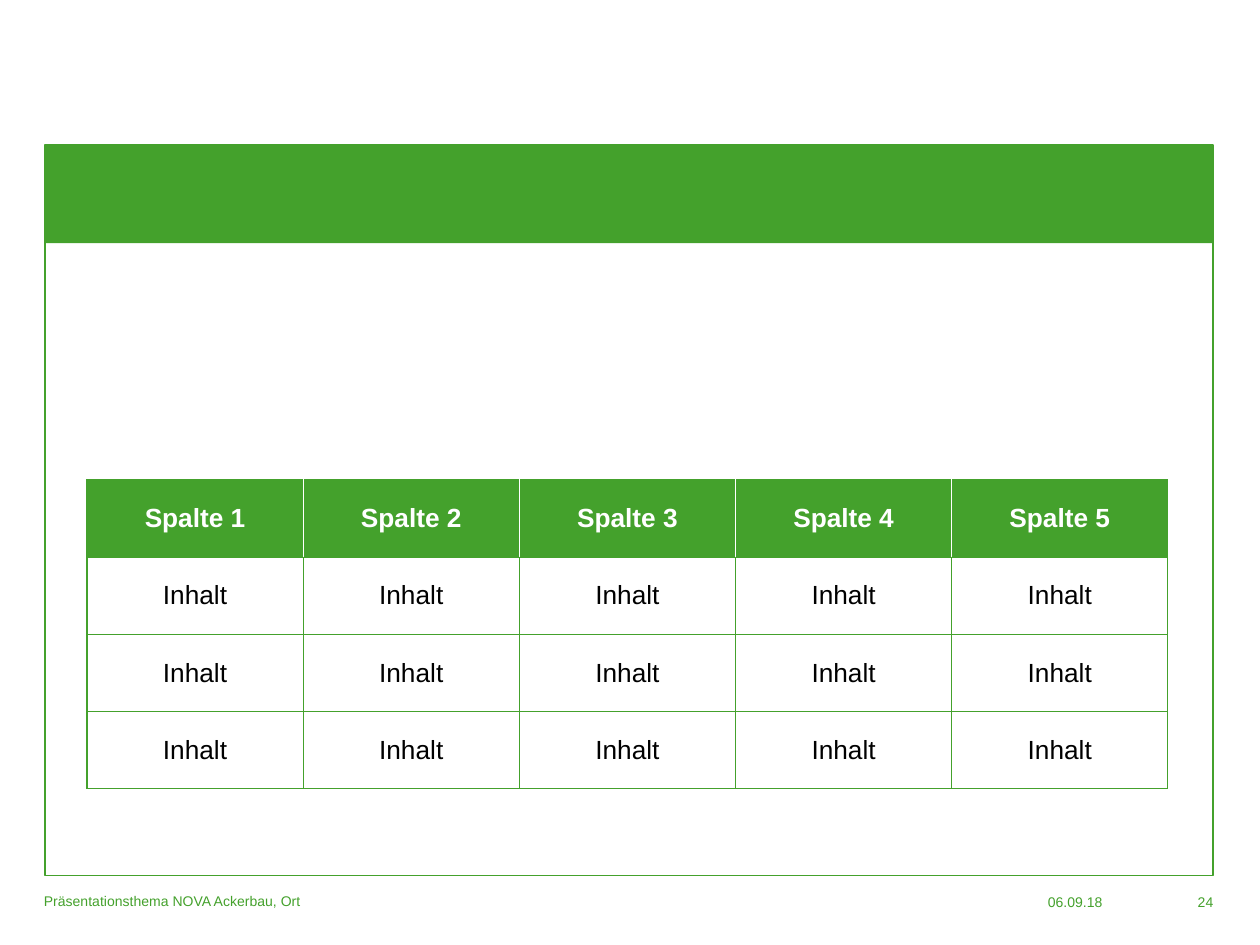
import pptx
import pptx.util
import pptx.dml.color
import pptx.enum.shapes
import pptx.enum.text
import pptx.oxml
import pptx.oxml.ns
from dataclasses import dataclass

Inches = pptx.util.Inches
Pt = pptx.util.Pt
ALIGN = pptx.enum.text.PP_ALIGN
ANCHOR = pptx.enum.text.MSO_ANCHOR


@dataclass(frozen=True)
class Theme:
    font: str = "Arial"
    green: str = "44A12C"
    white: str = "FFFFFF"
    black: str = "000000"
    footer_size: float = 8
    table_size: float = 15
    frame_line: float = 1
    cell_line: float = 0.75
    cell_margin: float = 0.04


THEME = Theme()


def rgb(value):
    return pptx.dml.color.RGBColor.from_string(value)


def set_attrs(obj, values):
    for name, value in values.items():
        setattr(obj, name, value)


def write(tf, text, size, color, align, bold=False):
    p = tf.paragraphs[0]
    p.alignment = align
    r = p.add_run()
    r.text = text
    set_attrs(r.font, {"name": THEME.font, "size": Pt(size), "bold": bold})
    r.font.color.rgb = rgb(color)


def add_rect(s, box, fill, line=None):
    kind = pptx.enum.shapes.MSO_SHAPE.RECTANGLE
    sp = s.shapes.add_shape(kind, *map(Inches, box))
    sp.shadow.inherit = False
    sp.fill.solid()
    sp.fill.fore_color.rgb = rgb(fill)
    if line:
        sp.line.color.rgb = rgb(line)
        sp.line.width = Pt(THEME.frame_line)
    else:
        sp.line.fill.background()


def add_footer(s, text, box, align, anchor, margins):
    tf = s.shapes.add_textbox(*map(Inches, box)).text_frame
    left, top = map(Inches, margins)
    set_attrs(tf, {"word_wrap": True, "vertical_anchor": anchor,
                   "margin_left": left, "margin_right": left,
                   "margin_top": top, "margin_bottom": top})
    write(tf, text, THEME.footer_size, THEME.green, align)


def set_borders(cell, colors):
    tc_pr = cell._tc.get_or_add_tcPr()
    for side, color in colors.items():
        tc_pr.append(pptx.oxml.parse_xml(
            f'<a:ln{side} {pptx.oxml.ns.nsdecls("a")} w="{Pt(THEME.cell_line)}">'
            f'<a:solidFill><a:srgbClr val="{color}"/></a:solidFill></a:ln{side}>'))


def format_cell(cell, text, header, first, last):
    margin = Inches(THEME.cell_margin)
    set_attrs(cell, {"vertical_anchor": ANCHOR.MIDDLE,
                     "margin_left": margin, "margin_right": margin,
                     "margin_top": margin, "margin_bottom": margin})
    inner = THEME.white if header else THEME.green
    # Borders come before the fill in the cell properties
    set_borders(cell, {"L": THEME.green if first else inner,
                       "R": THEME.green if last else inner,
                       "T": THEME.green, "B": THEME.green})
    if header:
        cell.fill.solid()
        cell.fill.fore_color.rgb = rgb(THEME.green)
    else:
        cell.fill.background()
    color = THEME.white if header else THEME.black
    write(cell.text_frame, text, THEME.table_size, color, ALIGN.CENTER, header)


def add_table(s, rows, box):
    n_rows, n_cols = len(rows), len(rows[0])
    table = s.shapes.add_table(n_rows, n_cols, *map(Inches, box)).table
    table.horz_banding = False
    for i, row in enumerate(rows):
        for j, text in enumerate(row):
            format_cell(table.cell(i, j), text, i == 0, j == 0, j == n_cols - 1)


def main():
    prs = pptx.Presentation()
    prs.slide_width, prs.slide_height = Inches(10), Inches(7.5)
    s = prs.slides.add_slide(prs.slide_layouts[6])

    # Footer: date and slide number
    for text, box in (("06.09.18", (7.97, 7.09, 0.78, 0.13)),
                      ("24", (8.73, 7.09, 0.9, 0.13))):
        add_footer(s, text, box, ALIGN.RIGHT, ANCHOR.TOP, (0, 0))

    # Content frame with title band
    add_rect(s, (0.36, 1.15, 9.27, 5.8), THEME.white, THEME.green)
    add_rect(s, (0.35, 1.15, 9.28, 0.78), THEME.green)

    # Footer: presentation topic
    add_footer(s, "Präsentationsthema NOVA Ackerbau, Ort", (0.25, 6.95, 6.33, 0.4),
               ALIGN.LEFT, ANCHOR.MIDDLE, (0.1, 0.05))

    # Table
    columns = 5
    header = [f"Spalte {n}" for n in range(1, columns + 1)]
    add_table(s, [header] + [["Inhalt"] * columns] * 3, (0.69, 3.81, 8.58, 2.45))

    prs.save("out.pptx")


if __name__ == "__main__":
    main()
